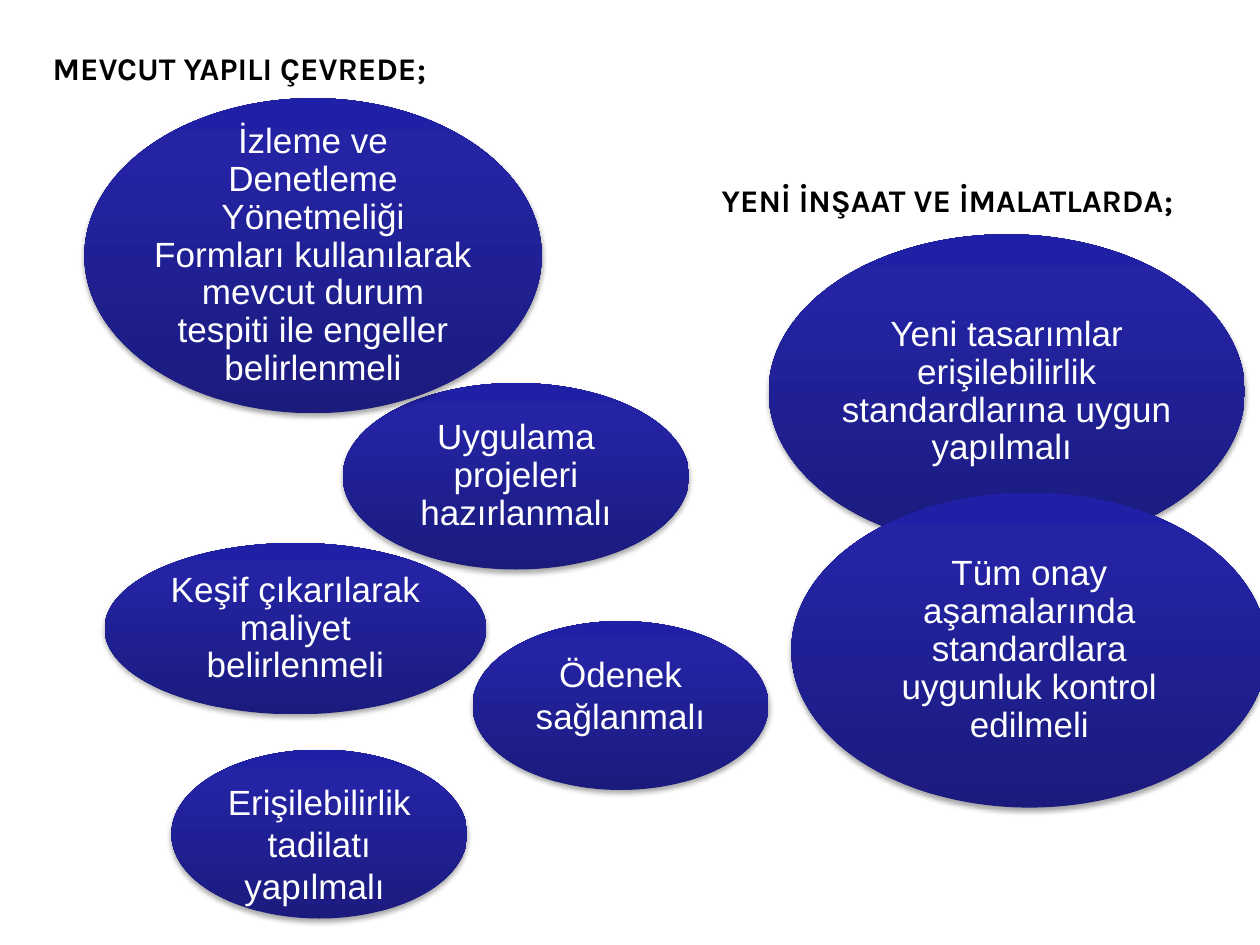
import copy

import pptx
import pptx.dml.color
import pptx.enum.shapes
import pptx.enum.text
import pptx.oxml
import pptx.oxml.ns
import pptx.util
from pptx.util import Inches

GRADIENT = [(0, "1B1B7E"), (0.8, "2323A3"), (1, "2020A6")]
MIDDLE = pptx.enum.text.MSO_ANCHOR.MIDDLE
TOP = pptx.enum.text.MSO_ANCHOR.TOP

HEADINGS = [
    (0.32, 0.34, "MEVCUT YAPILI ÇEVREDE;"),
    (5.63, 1.39, "YENİ İNŞAAT VE İMALATLARDA;"),
]
TIGHT_OVALS = [
    (2.72, 3.04, 2.75, 1.48, "Uygulama projeleri hazırlanmalı"),
    (6.1, 1.86, 3.78, 2.5, "Yeni tasarımlar erişilebilirlik standardlarına uygun yapılmalı "),
    (0.67, 0.78, 3.63, 2.5, "İzleme ve Denetleme Yönetmeliği Formları kullanılarak "
                            "mevcut durum tespiti ile engeller belirlenmeli"),
    (0.83, 4.31, 3.03, 1.36, "Keşif çıkarılarak maliyet belirlenmeli"),
    (6.28, 3.91, 3.78, 2.5, "Tüm onay aşamalarında standardlara uygunluk kontrol edilmeli"),
]
LOOSE_OVALS = [
    (3.75, 4.93, 2.35, 1.34, "Ödenek sağlanmalı"),
    (1.36, 5.95, 2.35, 1.34, "Erişilebilirlik tadilatı yapılmalı "),
]


def color(hex_code):
    """Return the colour for a hex string."""
    return pptx.dml.color.RGBColor.from_string(hex_code)


def set_font(paragraph, name, size, hex_code, bold=False):
    """Set the font of a whole paragraph."""
    font = paragraph.font
    font.name, font.size, font.bold = name, pptx.util.Pt(size), bold
    font.color.rgb = color(hex_code)


def fill_gradient(shape):
    """Fill a shape with the blue gradient, dark at the bottom."""
    shape.fill.gradient()
    shape.fill.gradient_angle = 90
    stop_list = next(shape._element.spPr.iter(pptx.oxml.ns.qn("a:gsLst")))
    stop_list.append(copy.deepcopy(stop_list[0]))
    for stop, (position, hex_code) in zip(shape.fill.gradient_stops, GRADIENT):
        stop.position = position
        stop.color.rgb = color(hex_code)


def add_shadow(shape):
    """Give a shape a soft shadow straight below it."""
    shape.shadow.inherit = False
    effects = shape._element.spPr.find(pptx.oxml.ns.qn("a:effectLst"))
    effects.append(pptx.oxml.parse_xml(
        f'<a:outerShdw {pptx.oxml.ns.nsdecls("a")} blurRad="{pptx.util.Pt(3.1)}" '
        f'dist="{pptx.util.Pt(1.8)}" dir="5400000" rotWithShape="0">'
        '<a:srgbClr val="000000"><a:alpha val="35000"/></a:srgbClr></a:outerShdw>'))


def add_oval(page, left, top, width, height, text, tight):
    """Add a blue oval with its text, set tight and centred or loose from the top."""
    oval = page.shapes.add_shape(
        pptx.enum.shapes.MSO_SHAPE.OVAL,
        Inches(left), Inches(top), Inches(width), Inches(height))
    fill_gradient(oval)
    oval.line.fill.background()
    add_shadow(oval)
    frame = oval.text_frame
    frame.word_wrap = True
    frame.vertical_anchor = MIDDLE if tight else TOP
    if tight:
        frame.margin_left = frame.margin_right = Inches(0.01)
        frame.margin_top = frame.margin_bottom = Inches(0.01)
    paragraph = frame.paragraphs[0]
    paragraph.text = text
    paragraph.alignment = pptx.enum.text.PP_ALIGN.CENTER
    paragraph.line_spacing = 0.9 if tight else 1.0
    set_font(paragraph, "Arial", 20, "FFFFFF")


def add_heading(page, left, top, text):
    """Add a bold heading above a cluster of ovals."""
    box = page.shapes.add_textbox(Inches(left), Inches(top), Inches(4.33), Inches(0.4))
    frame = box.text_frame
    frame.word_wrap = True
    frame.auto_size = pptx.enum.text.MSO_AUTO_SIZE.SHAPE_TO_FIT_TEXT
    paragraph = frame.paragraphs[0]
    paragraph.text = text
    set_font(paragraph, "Karla", 18, "000000", bold=True)


def main():
    """Build the slide and save it."""
    deck = pptx.Presentation()
    deck.slide_width, deck.slide_height = Inches(10), Inches(7.5)
    page = deck.slides.add_slide(deck.slide_layouts[6])
    for heading in HEADINGS:
        add_heading(page, *heading)
    for oval in TIGHT_OVALS:
        add_oval(page, *oval, tight=True)
    for oval in LOOSE_OVALS:
        add_oval(page, *oval, tight=False)
    deck.save("out.pptx")


if __name__ == "__main__":
    main()
